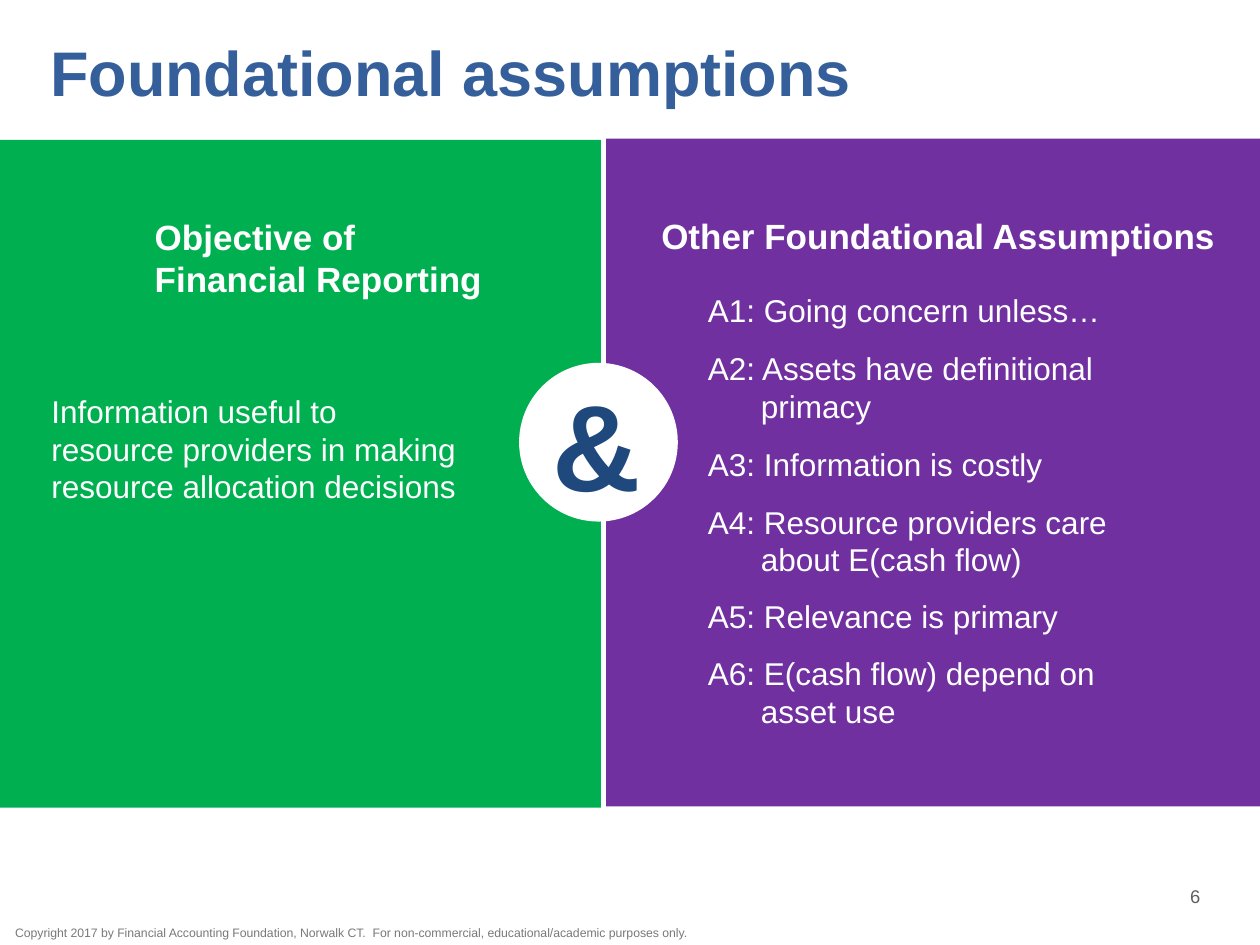
from dataclasses import dataclass

import pptx
import pptx.dml.color
import pptx.enum.shapes
import pptx.enum.text
import pptx.util

Inches = pptx.util.Inches
Pt = pptx.util.Pt
Shapes = pptx.enum.shapes.MSO_SHAPE
Align = pptx.enum.text.PP_ALIGN
Anchor = pptx.enum.text.MSO_ANCHOR


@dataclass(frozen=True)
class Theme:
    font: str = "Arial"
    white: str = "FFFFFF"
    green: str = "00B050"
    purple: str = "7030A0"
    title_blue: str = "355F9A"
    navy: str = "1F497D"
    number_gray: str = "5F5F5F"
    footer_gray: str = "78797B"
    title_size: float = 36
    heading_size: float = 20
    body_size: float = 18
    ampersand_size: float = 70
    number_size: float = 10.5
    footer_size: float = 7


THEME = Theme()
DEFAULT_INSETS = (0.1, 0.05, 0.1, 0.05)

# Top, width, height and wording of each assumption
ASSUMPTIONS = [
    (2.26, 3.34, 0.4, "A1: Going concern unless…"),
    (2.72, 4.4, 0.71, "A2: Assets have definitional\nprimacy"),
    (3.48, 2.88, 0.4, "A3: Information is costly"),
    (3.94, 4.4, 0.71, "A4: Resource providers care\nabout E(cash flow)"),
    (4.69, 3.01, 0.4, "A5: Relevance is primary"),
    (5.14, 4.4, 0.71, "A6: E(cash flow) depend on\nasset use"),
]


def color(value):
    return pptx.dml.color.RGBColor.from_string(value)


def add_block(slide, kind, box, fill):
    """Add a filled preset shape without outline or shadow."""
    shape = slide.shapes.add_shape(kind, *map(Inches, box))
    shape.shadow.inherit = False
    shape.fill.solid()
    shape.fill.fore_color.rgb = color(fill)
    shape.line.fill.background()


def add_text(slide, box, text, *, size=THEME.body_size, fill=THEME.white, bold=False,
             align=Align.LEFT, anchor=Anchor.TOP, insets=DEFAULT_INSETS,
             line_spacing=None, hanging=0):
    """Add one paragraph; a newline in the text becomes a line break."""
    frame = slide.shapes.add_textbox(*map(Inches, box)).text_frame
    frame.word_wrap = True
    frame.vertical_anchor = anchor
    (frame.margin_left, frame.margin_top,
     frame.margin_right, frame.margin_bottom) = map(Inches, insets)
    paragraph = frame.paragraphs[0]
    paragraph.text = text
    paragraph.alignment = align
    if line_spacing:
        paragraph.line_spacing = Pt(line_spacing)
    if hanging:
        properties = paragraph._p.get_or_add_pPr()
        properties.set("marL", str(Inches(hanging)))
        properties.set("indent", str(-Inches(hanging)))
    for run in paragraph.runs:
        run.font.name = THEME.font
        run.font.size = Pt(size)
        run.font.bold = bold
        run.font.color.rgb = color(fill)


def add_title_and_footer(slide):
    add_text(slide, (0.3, 0.12, 9.49, 0.98), "Foundational assumptions",
             size=THEME.title_size, fill=THEME.title_blue, bold=True,
             anchor=Anchor.MIDDLE, insets=(0.1, 0, 0, 0), line_spacing=37)
    add_text(slide, (0.12, 7.34, 5.43, 0.14),
             "Copyright 2017 by Financial Accounting Foundation, Norwalk CT.  "
             "For non-commercial, educational/academic purposes only.",
             size=THEME.footer_size, fill=THEME.footer_gray, insets=(0, 0, 0, 0))
    add_text(slide, (8.97, 6.95, 1.03, 0.33), "6", size=THEME.number_size,
             fill=THEME.number_gray, align=Align.CENTER, anchor=Anchor.MIDDLE)


def add_objective(slide):
    add_block(slide, Shapes.RECTANGLE, (0, 1.11, 4.77, 5.3), THEME.green)
    add_text(slide, (1.13, 1.66, 2.9, 0.77), "Objective of\nFinancial Reporting",
             size=THEME.heading_size, bold=True)
    add_text(slide, (0.31, 3.06, 3.44, 1.01),
             "Information useful to resource providers in making "
             "resource allocation decisions")


def add_assumptions(slide):
    add_block(slide, Shapes.RECTANGLE, (4.81, 1.1, 5.19, 5.3), THEME.purple)
    add_text(slide, (5.15, 1.65, 4.63, 0.44), "Other Foundational Assumptions",
             size=THEME.heading_size, bold=True)
    for top, width, height, text in ASSUMPTIONS:
        add_text(slide, (5.52, top, width, height), text, hanging=0.42)


def add_ampersand(slide):
    add_block(slide, Shapes.OVAL, (4.12, 2.88, 1.26, 1.26), THEME.white)
    add_text(slide, (4.29, 2.88, 0.91, 1.28), "&", size=THEME.ampersand_size,
             fill=THEME.navy, bold=True)


def main():
    presentation = pptx.Presentation()
    presentation.slide_width = Inches(10)
    presentation.slide_height = Inches(7.5)
    slide = presentation.slides.add_slide(presentation.slide_layouts[6])
    add_title_and_footer(slide)
    add_objective(slide)
    add_assumptions(slide)
    add_ampersand(slide)
    presentation.save("out.pptx")


if __name__ == "__main__":
    main()
